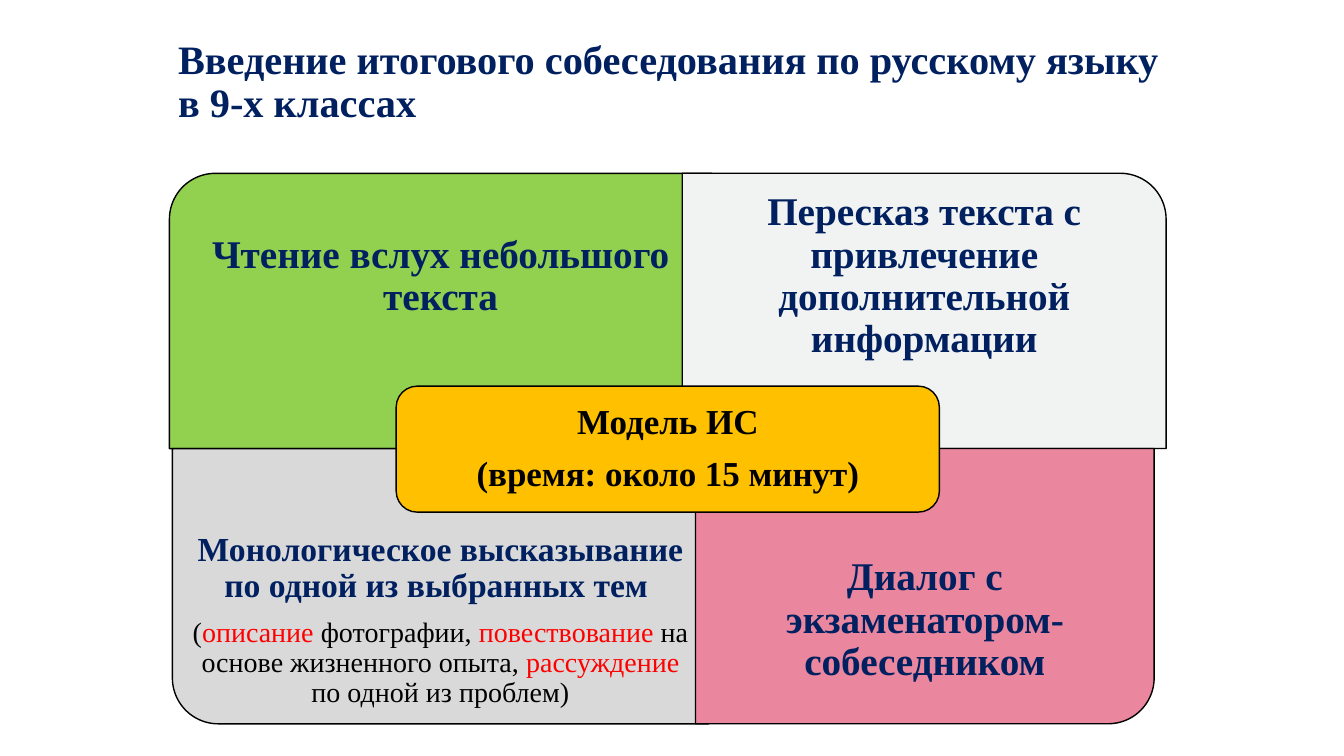
from dataclasses import dataclass

from pptx import Presentation
from pptx.dml.color import RGBColor
from pptx.enum.shapes import MSO_SHAPE
from pptx.enum.text import MSO_ANCHOR, MSO_AUTO_SIZE, PP_ALIGN
from pptx.util import Pt

ROUND_ONE = MSO_SHAPE.ROUND_1_RECTANGLE
ROUNDED = MSO_SHAPE.ROUNDED_RECTANGLE
TOP, MIDDLE = MSO_ANCHOR.TOP, MSO_ANCHOR.MIDDLE
LEFT, CENTER = PP_ALIGN.LEFT, PP_ALIGN.CENTER
NO_FIT = MSO_AUTO_SIZE.NONE

NAVY = RGBColor(0x00, 0x20, 0x60)
BLACK = RGBColor(0x00, 0x00, 0x00)
RED = RGBColor(0xFF, 0x00, 0x00)
GREEN = RGBColor(0x92, 0xD0, 0x50)
PALE = RGBColor(0xF1, 0xF2, 0xF2)
GRAY = RGBColor(0xD9, 0xD9, 0xD9)
PINK = RGBColor(0xEA, 0x86, 0x9D)
AMBER = RGBColor(0xFF, 0xC0, 0x00)

FONT = "Times New Roman"
LINE_SPACING = 0.9
SPACE_AFTER = 0.39  # share of the text size

# Two rows of panels; the text fills the outer three quarters of each
ROW_TOP, ROW_H = 123.8, 196.6
ROW_MIDDLE = ROW_TOP + ROW_H
TEXT_H = 0.75 * ROW_H
LOWER_TEXT_TOP = ROW_MIDDLE + ROW_H - TEXT_H


@dataclass(frozen=True)
class Run:
    text: str
    color: RGBColor = NAVY


@dataclass(frozen=True)
class Para:
    runs: tuple[Run, ...]
    size: float
    bold: bool = True


@dataclass(frozen=True)
class Box:
    left: float
    top: float
    width: float
    height: float

    def turned(self) -> "Box":
        """The same centre with width and height swapped."""
        shift = (self.width - self.height) / 2
        return Box(self.left + shift, self.top - shift, self.height, self.width)

    def lengths(self) -> tuple[Pt, ...]:
        return Pt(self.left), Pt(self.top), Pt(self.width), Pt(self.height)


@dataclass(frozen=True)
class Panel:
    box: Box
    text_box: Box
    fill: RGBColor
    inset: float
    paras: tuple[Para, ...]
    rotation: int = 0
    kind: MSO_SHAPE = ROUND_ONE


def quadrant(left: float, width: float, upper: bool, fill: RGBColor,
             rotation: int, inset: float, *paras: Para) -> Panel:
    box = Box(left, ROW_TOP if upper else ROW_MIDDLE, width, ROW_H)
    text_top = ROW_TOP if upper else LOWER_TEXT_TOP
    return Panel(box, Box(left, text_top, width, TEXT_H), fill, inset, paras, rotation)


def heading(text: str, size: float = 28, color: RGBColor = NAVY) -> Para:
    return Para((Run(text, color),), size)


def write_para(p, para: Para, align: PP_ALIGN, after: float) -> None:
    p.alignment = align
    p.line_spacing = LINE_SPACING
    p.space_before = Pt(0)
    p.space_after = Pt(after)
    for run in para.runs:
        r = p.add_run()
        r.text = run.text
        fmt = {"name": FONT, "size": Pt(para.size), "bold": para.bold}
        for name, value in fmt.items():
            setattr(r.font, name, value)
        r.font.color.rgb = run.color


def set_frame(tf, **fmt) -> None:
    for name, value in {"word_wrap": True, "auto_size": NO_FIT, **fmt}.items():
        setattr(tf, name, value)


def draw_panel(s, panel: Panel) -> None:
    # Filled outline
    box = panel.box.turned() if panel.rotation in (90, 270) else panel.box
    sp = s.shapes.add_shape(panel.kind, *box.lengths())
    sp.rotation = panel.rotation
    sp.shadow.inherit = False
    sp.fill.solid()
    sp.fill.fore_color.rgb = panel.fill
    sp.line.color.rgb = BLACK
    sp.line.width = Pt(1)

    # Upright text over it
    tf = s.shapes.add_textbox(*panel.text_box.lengths()).text_frame
    inset = Pt(panel.inset)
    set_frame(tf, vertical_anchor=MIDDLE, margin_left=inset, margin_right=inset,
              margin_top=inset, margin_bottom=inset)
    for i, para in enumerate(panel.paras):
        p = tf.add_paragraph() if i else tf.paragraphs[0]
        write_para(p, para, CENTER, SPACE_AFTER * para.size)


SPEECH_TYPES = Para((
    Run("(", BLACK),
    Run("описание", RED),
    Run(" фотографии, ", BLACK),
    Run("повествование", RED),
    Run(" на основе жизненного опыта, ", BLACK),
    Run("рассуждение", RED),
    Run(" по одной из проблем)", BLACK),
), 20, False)

PANELS = (
    quadrant(121, 387.4, True, GREEN, 270, 15.8,
             heading("Чтение вслух небольшого текста")),
    quadrant(487.4, 345.6, True, PALE, 0, 15.8,
             heading("Пересказ текста с привлечение дополнительной информации")),
    quadrant(123.1, 383, False, GRAY, 180, 13.5,
             heading("Монологическое высказывание по одной из выбранных тем ", 24),
             SPEECH_TYPES),
    quadrant(496.8, 327.6, False, PINK, 90, 15.8,
             heading("Диалог с экзаменатором-собеседником")),
    Panel(Box(283, 275.8, 388, 90), Box(287.4, 280.2, 379.2, 81.2), AMBER, 7.2,
          (heading("Модель ИС", 25, BLACK),
           heading("(время: около 15 минут)", 25, BLACK)), kind=ROUNDED),
)


def main() -> None:
    prs = Presentation()
    prs.slide_width, prs.slide_height = Pt(960), Pt(540)
    s = prs.slides.add_slide(prs.slide_layouts[5])

    # Title
    title = s.shapes.title
    title.left, title.top, title.width, title.height = Box(120, 28, 720, 90).lengths()
    set_frame(title.text_frame, vertical_anchor=TOP, margin_top=Pt(0))
    write_para(title.text_frame.paragraphs[0],
               heading("Введение итогового собеседования по русскому языку в 9-х классах",
                       28.8), LEFT, 0)

    # Four parts of the interview and the centre label
    for panel in PANELS:
        draw_panel(s, panel)

    prs.save("out.pptx")


if __name__ == "__main__":
    main()
